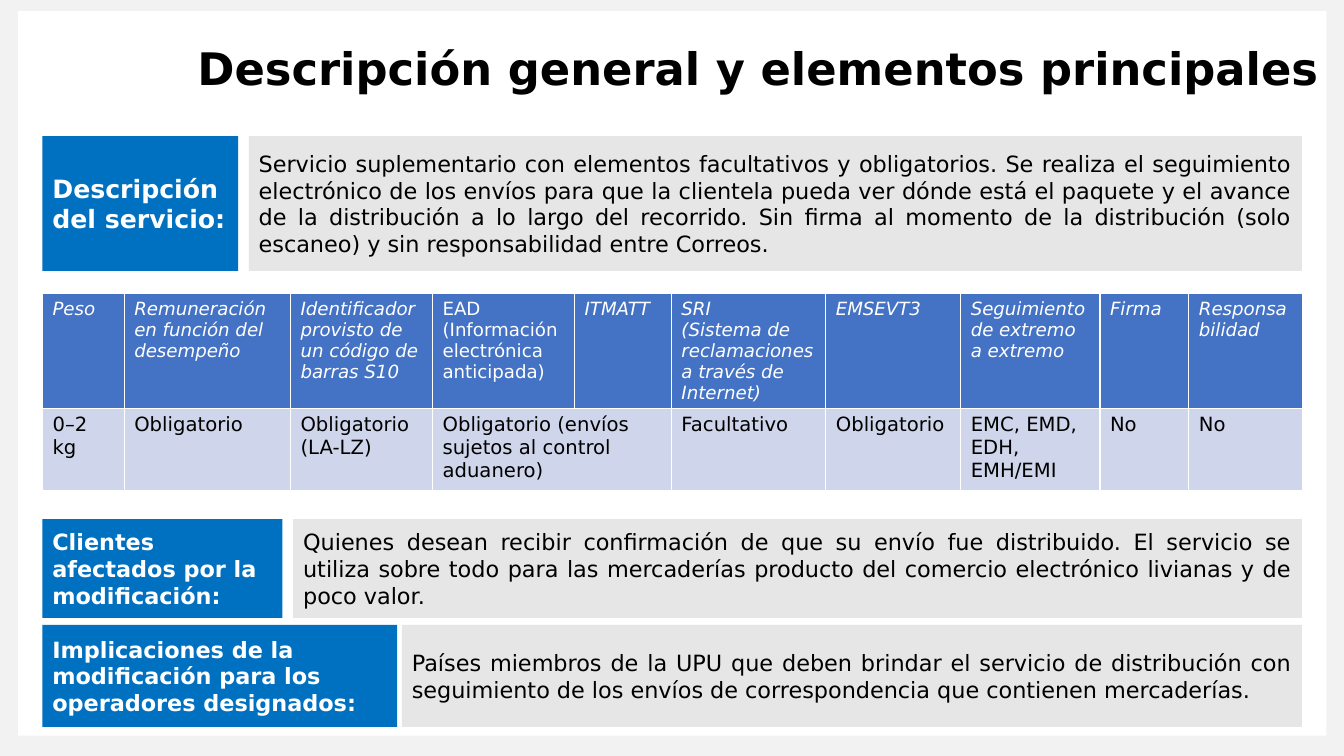
from pptx import Presentation
from pptx.dml.color import RGBColor
from pptx.enum.shapes import MSO_SHAPE
from pptx.enum.text import MSO_ANCHOR, MSO_AUTO_SIZE, PP_ALIGN
from pptx.util import Cm, Pt

RECTANGLE = MSO_SHAPE.RECTANGLE
MIDDLE = MSO_ANCHOR.MIDDLE
LEFT, JUSTIFY = PP_ALIGN.LEFT, PP_ALIGN.JUSTIFY

FONT = "DejaVu Sans"
BLACK = RGBColor(0x00, 0x00, 0x00)
WHITE = RGBColor(0xFF, 0xFF, 0xFF)
FRAME_GRAY = RGBColor(0xF2, 0xF2, 0xF2)
BODY_GRAY = RGBColor(0xE7, 0xE6, 0xE6)
LABEL_BLUE = RGBColor(0x00, 0x70, 0xC0)
HEADER_BLUE = RGBColor(0x44, 0x72, 0xC4)
ROW_BLUE = RGBColor(0xCF, 0xD5, 0xEA)

MARGIN_LEFT, MARGIN_RIGHT = 1.07, 32.81


def write(frame, text, size, color=BLACK, bold=False, italic=False, align=LEFT):
    """Fill a text frame; each line of text becomes a paragraph."""
    frame.word_wrap = True
    frame.text = text
    for para in frame.paragraphs:
        para.alignment = align
        para.font.name = FONT
        para.font.size = Pt(size)
        para.font.bold = bold
        para.font.italic = italic
        para.font.color.rgb = color


def add_panel(left, top, width, height, fill):
    panel = page.shapes.add_shape(RECTANGLE, Cm(left), Cm(top), Cm(width), Cm(height))
    panel.shadow.inherit = False
    panel.fill.solid()
    panel.fill.fore_color.rgb = fill
    panel.line.fill.background()
    panel.text_frame.vertical_anchor = MIDDLE
    return panel


deck = Presentation()
deck.slide_width, deck.slide_height = Cm(33.87), Cm(19.05)
page = deck.slides.add_slide(deck.slide_layouts[5])

# Frame and title
title = page.shapes.title
frame_panels = [
    add_panel(0, 0, 33.87, 19.05, FRAME_GRAY),
    add_panel(0.46, 0.28, 32.97, 18.26, WHITE),
]
for panel in frame_panels:
    title.element.addprevious(panel.element)

title.left, title.top, title.width, title.height = Cm(4.72), Cm(0.99), Cm(28.85), Cm(1.6)
write(title.text_frame, "Descripción general y elementos principales", 32, bold=True)
title.text_frame.auto_size = MSO_AUTO_SIZE.NONE
title.text_frame.vertical_anchor = MIDDLE
title.text_frame.paragraphs[0].line_spacing = 0.9

# Labelled descriptions: top, height, label width, body left, label size, label, body
sections = [
    (3.43, 3.4, 4.93, 6.27, 18, "Descripción del servicio:",
     "Servicio suplementario con elementos facultativos y obligatorios. Se realiza el "
     "seguimiento electrónico de los envíos para que la clientela pueda ver dónde está el "
     "paquete y el avance de la distribución a lo largo del recorrido. Sin firma al momento "
     "de la distribución (solo escaneo) y sin responsabilidad entre Correos."),
    (13.08, 2.49, 6.05, 7.39, 16, "Clientes afectados por la modificación:",
     "Quienes desean recibir confirmación de que su envío fue distribuido. El servicio se "
     "utiliza sobre todo para las mercaderías producto del comercio electrónico livianas y "
     "de poco valor."),
    (15.75, 2.57, 8.94, 10.13, 16,
     "Implicaciones de la modificación para los operadores designados:",
     "Países miembros de la UPU que deben brindar el servicio de distribución con "
     "seguimiento de los envíos de correspondencia que contienen mercaderías."),
]
for top, height, label_width, body_left, label_size, label, body in sections:
    label_panel = add_panel(MARGIN_LEFT, top, label_width, height, LABEL_BLUE)
    write(label_panel.text_frame, label, label_size, color=WHITE, bold=True)
    body_panel = add_panel(body_left, top, MARGIN_RIGHT - body_left, height, BODY_GRAY)
    write(body_panel.text_frame, body, 16, align=JUSTIFY)

# Service elements: column width in cm, heading, value
elements = [
    (2.06, "Peso", "0–2 kg"),
    (4.19, "Remuneración en función del desempeño", "Obligatorio"),
    (3.58, "Identificador provisto de un código de barras S10", "Obligatorio\n(LA-LZ)"),
    (3.58, "EAD (Información electrónica anticipada)",
     "Obligatorio (envíos sujetos al control aduanero)"),
    (2.44, "ITMATT", ""),
    (3.89, "SRI \v(Sistema de reclamaciones a través de Internet)", "Facultativo"),
    (3.4, "EMSEVT3", "Obligatorio"),
    (3.51, "Seguimiento de extremo a extremo", "EMC, EMD, EDH, EMH/EMI"),
    (2.24, "Firma", "No"),
    (2.87, "Responsabilidad", "No"),
]
table = page.shapes.add_table(
    2, len(elements), Cm(MARGIN_LEFT), Cm(7.39), Cm(31.76), Cm(4.98)
).table
table.rows[0].height, table.rows[1].height = Cm(2.9), Cm(2.08)
table.cell(1, 3).merge(table.cell(1, 4))

for column, (width, heading, value) in enumerate(elements):
    table.columns[column].width = Cm(width)
    header_cell, value_cell = table.cell(0, column), table.cell(1, column)
    for cell, fill in ((header_cell, HEADER_BLUE), (value_cell, ROW_BLUE)):
        cell.fill.solid()
        cell.fill.fore_color.rgb = fill
    write(header_cell.text_frame, heading, 13, color=WHITE,
          italic=not heading.startswith("EAD"))
    if value:
        write(value_cell.text_frame, value, 14)

deck.save("out.pptx")
